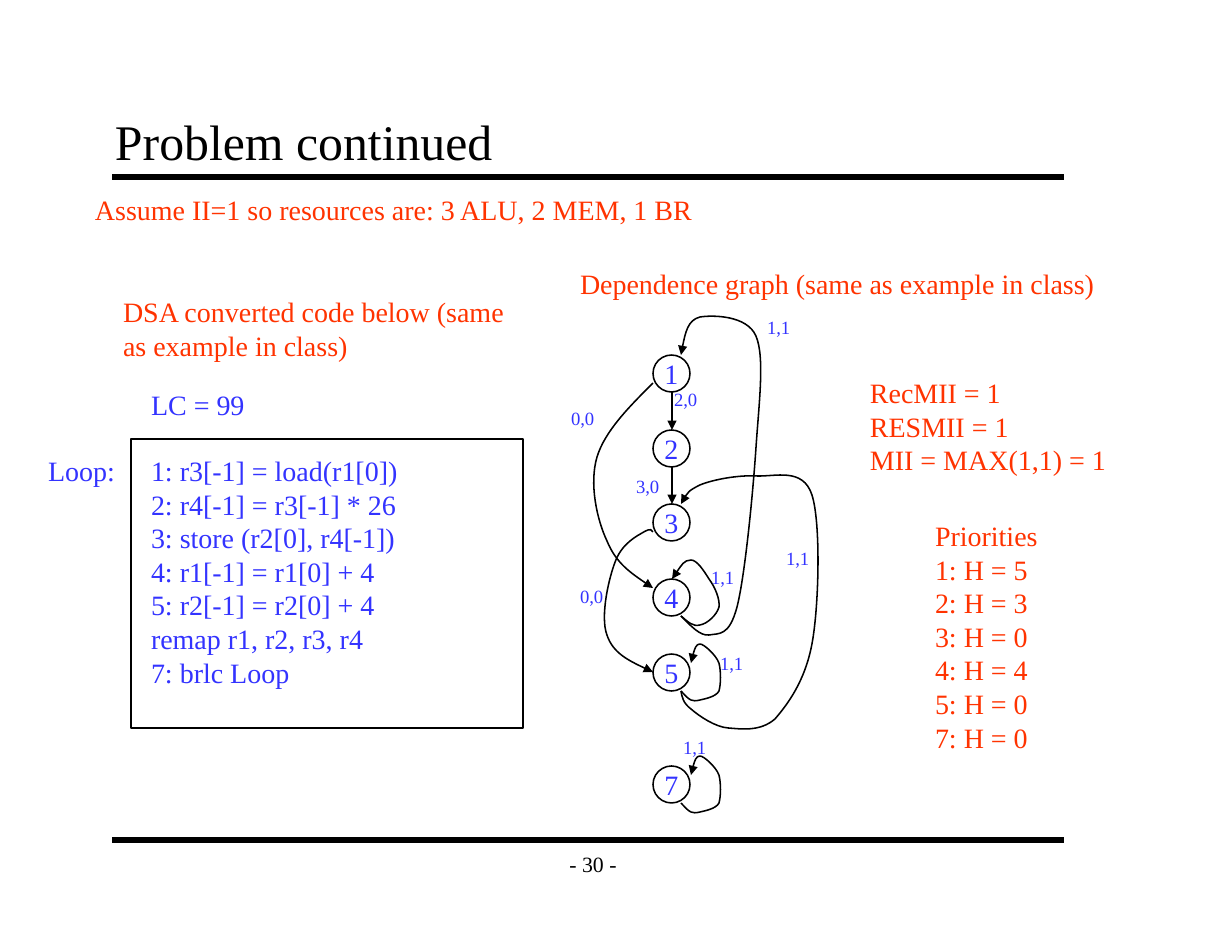
from dataclasses import dataclass

from lxml import etree
from pptx import Presentation
from pptx.dml.color import RGBColor
from pptx.enum.shapes import MSO_CONNECTOR, MSO_SHAPE
from pptx.enum.text import MSO_ANCHOR, MSO_AUTO_SIZE, PP_ALIGN
from pptx.oxml.ns import qn
from pptx.util import Pt

STRAIGHT = MSO_CONNECTOR.STRAIGHT
OVAL, RECTANGLE = MSO_SHAPE.OVAL, MSO_SHAPE.RECTANGLE
TOP, MIDDLE, BOTTOM = MSO_ANCHOR.TOP, MSO_ANCHOR.MIDDLE, MSO_ANCHOR.BOTTOM
NO_FIT, GROW = MSO_AUTO_SIZE.NONE, MSO_AUTO_SIZE.SHAPE_TO_FIT_TEXT
LEFT, CENTER = PP_ALIGN.LEFT, PP_ALIGN.CENTER

EMU_PER_PX = 914400 / 112
TITLE_ONLY = 5


@dataclass(frozen=True)
class Theme:
    font: str = "Times New Roman"
    ink: RGBColor = RGBColor(0x00, 0x00, 0x00)
    code: RGBColor = RGBColor(0x33, 0x33, 0xFF)
    note: RGBColor = RGBColor(0xFF, 0x33, 0x00)
    title_size: int = 32
    body_size: int = 18
    page_size: int = 14
    label_size: int = 12
    thin: int = 1
    rule: int = 4


THEME = Theme()

# Graph nodes: name and row in the column
NODES = {"1": 0, "2": 1, "3": 2, "4": 3, "5": 4, "7": 5.5}
NODE_LEFT, NODE_TOP, NODE_SIZE, ROW_STEP = 653, 355, 37, 224 / 3

# Edges: start, then control, control, end for each curve
SELF_LOOP = [(681, 691), (684, 694), (688, 699), (691, 700),
             (693, 701), (696, 701), (700, 700), (704, 699), (716, 697), (719, 691),
             (721, 684), (721, 671), (719, 663), (716, 655), (704, 644), (700, 644),
             (696, 644), (693, 653), (691, 663)]
CURVED_EDGES = {
    "4 to 1": [(681, 616), (691, 626), (700, 636), (709, 635),
               (719, 633), (729, 637), (737, 607), (745, 576), (753, 493), (756, 448),
               (759, 403), (765, 357), (756, 336), (747, 315), (712, 315), (700, 317),
               (688, 320), (684, 337), (681, 355)],
    "4 to 4": [(681, 616), (688, 622), (693, 627), (700, 625),
               (707, 624), (717, 615), (719, 607), (720, 599), (715, 587), (709, 579),
               (704, 571), (697, 560), (691, 560), (684, 560), (679, 569), (672, 579)],
    "5 to 5": SELF_LOOP,
    "7 to 7": [(x, y + 112) for x, y in SELF_LOOP],
    "5 to 3": [(681, 691), (682, 697), (683, 703), (691, 709),
               (699, 716), (715, 727), (728, 728), (741, 729), (760, 732), (775, 719),
               (788, 704), (805, 681), (812, 644), (819, 607), (821, 523), (812, 495),
               (803, 467), (775, 477), (756, 476), (737, 475), (712, 480), (700, 485),
               (688, 491), (684, 497), (681, 504)],
    "1 to 4": [(653, 383), (629, 407), (605, 431), (597, 457),
               (589, 484), (597, 520), (607, 541), (616, 563), (635, 576), (653, 588)],
    "3 to 5": [(653, 532), (652, 530), (651, 528), (644, 532),
               (637, 536), (623, 543), (616, 560), (609, 577), (600, 616), (607, 635),
               (613, 653), (633, 663), (653, 672)],
}
EDGE_LABELS = [("1,1", 672, 730), ("3,0", 625, 469), ("2,0", 663, 382),
               ("1,1", 756, 310), ("1,1", 775, 541), ("1,1", 709, 646),
               ("1,1", 700, 560), ("0,0", 560, 401), ("0,0", 569, 579)]

# Notes and code: lines, box, colour
TEXT_BLOCKS = [
    (["Assume II=1 so resources are: 3 ALU, 2 MEM, 1 BR"], (84, 187, 622, 45), THEME.note),
    (["DSA converted code below (same", "as example in class)"],
     (112, 289, 405, 78), THEME.note),
    (["Dependence graph (same as example in class)"], (569, 261, 538, 45), THEME.note),
    (["RecMII = 1", "RESMII = 1", "MII = MAX(1,1) = 1"], (859, 370, 259, 112), THEME.note),
    (["Priorities", "1: H = 5", "2: H = 3", "3: H = 0", "4: H = 4", "5: H = 0", "7: H = 0"],
     (924, 513, 125, 246), THEME.note),
    (["LC = 99"], (140, 382, 116, 45), THEME.code),
    (["Loop:"], (37, 448, 90, 45), THEME.code),
    (["1: r3[-1] = load(r1[0])", "2: r4[-1] = r3[-1] * 26", "3: store (r2[0], r4[-1])",
      "4: r1[-1] = r1[0] + 4", "5: r2[-1] = r2[0] + 4", "remap r1, r2, r3, r4",
      "7: brlc Loop"], (140, 448, 269, 246), THEME.code),
]


def px(length):
    return round(length * EMU_PER_PX)


def place(box):
    return [px(length) for length in box]


def write(shape, lines, size=THEME.body_size, color=THEME.ink, align=LEFT,
          anchor=TOP, wrap=False, fit=NO_FIT):
    frame = shape.text_frame
    frame.text = "\n".join(lines)
    frame.word_wrap = wrap
    frame.auto_size = fit
    frame.vertical_anchor = anchor
    for paragraph in frame.paragraphs:
        paragraph.alignment = align
        for run in paragraph.runs:
            run.font.name = THEME.font
            run.font.size = Pt(size)
            run.font.color.rgb = color


def add_text(slide, lines, box, **text_format):
    write(slide.shapes.add_textbox(*place(box)), lines, **text_format)


def draw_line(shape, width=THEME.thin, arrow=False):
    shape.line.color.rgb = THEME.ink
    shape.line.width = Pt(width)
    if arrow:
        outline = shape._element.spPr.find(qn("a:ln"))
        etree.SubElement(outline, qn("a:tailEnd"), type="triangle")


def add_outline(slide, preset, box):
    shape = slide.shapes.add_shape(preset, *place(box))
    shape.shadow.inherit = False
    shape.fill.background()
    draw_line(shape)
    return shape


def add_straight(slide, start, end, **line_format):
    line = slide.shapes.add_connector(STRAIGHT, *place(start + end))
    draw_line(line, **line_format)
    etree.SubElement(line._element.spPr, qn("a:effectLst"))


def add_curve(slide, points):
    builder = slide.shapes.build_freeform(*points[0], scale=EMU_PER_PX)
    builder.add_line_segments(points[1:], close=False)
    curve = builder.convert_to_shape()
    curve.shadow.inherit = False
    curve.fill.background()
    draw_line(curve, arrow=True)
    # Turn every three straight segments into one cubic curve
    segments = list(curve._element.iter(qn("a:lnTo")))
    outline = segments[0].getparent()
    for first in range(0, len(segments), 3):
        cubic = etree.SubElement(outline, qn("a:cubicBezTo"))
        for segment in segments[first:first + 3]:
            cubic.append(segment[0])
            outline.remove(segment)


def add_frame(slide):
    for y in (177, 840):
        add_straight(slide, (112, y), (1064, y), width=THEME.rule)
    add_text(slide, ["- 30 -"], (551, 840, 84, 47), size=THEME.page_size,
             align=CENTER, anchor=MIDDLE)
    title = slide.shapes.title
    title.left, title.top, title.width, title.height = place((103, 103, 952, 75))
    write(title, ["Problem continued"], size=THEME.title_size, anchor=BOTTOM, wrap=True)
    frame = title.text_frame
    frame.margin_left = frame.margin_right = px(12)
    frame.margin_top = frame.margin_bottom = px(7)


def add_graph(slide):
    tops = {name: round(NODE_TOP + ROW_STEP * row) for name, row in NODES.items()}
    for name, top in tops.items():
        node = add_outline(slide, OVAL, (NODE_LEFT, top, NODE_SIZE, NODE_SIZE))
        write(node, [name], color=THEME.code, align=CENTER, anchor=MIDDLE)
    for source, target in (("1", "2"), ("2", "3")):
        add_straight(slide, (672, tops[source] + NODE_SIZE), (672, tops[target]), arrow=True)
    for points in CURVED_EDGES.values():
        add_curve(slide, points)
    for label, left, top in EDGE_LABELS:
        add_text(slide, [label], (left, top, 46, 34), size=THEME.label_size,
                 color=THEME.code, fit=GROW)


def main():
    deck = Presentation()
    deck.slide_width, deck.slide_height = px(1232), px(952)
    slide = deck.slides.add_slide(deck.slide_layouts[TITLE_ONLY])
    add_frame(slide)
    add_graph(slide)
    for lines, box, color in TEXT_BLOCKS:
        add_text(slide, lines, box, color=color, fit=GROW)
    # Border of the loop body
    add_outline(slide, RECTANGLE, (131, 439, 392, 289))
    deck.save("out.pptx")


if __name__ == "__main__":
    main()
